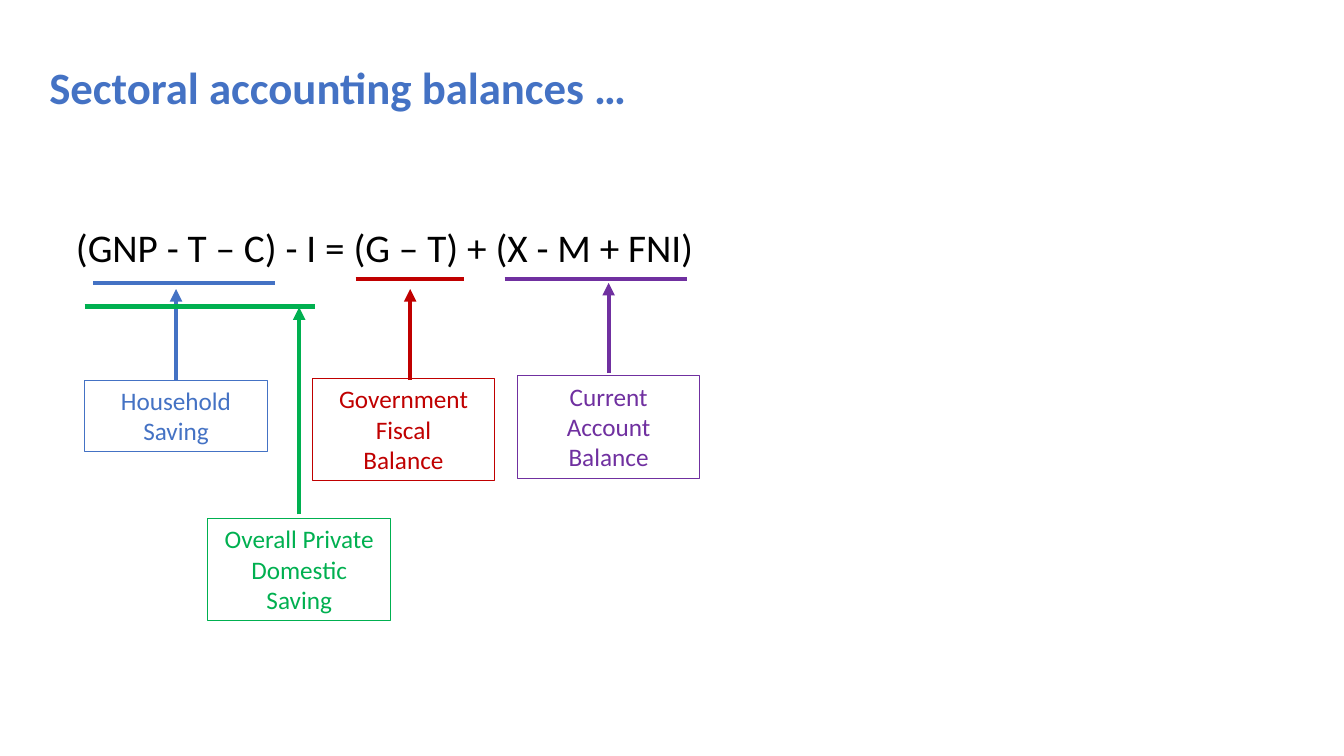
from dataclasses import dataclass

from pptx import Presentation
from pptx.dml.color import RGBColor
from pptx.enum.shapes import MSO_CONNECTOR, MSO_SHAPE
from pptx.enum.text import MSO_ANCHOR, MSO_AUTO_SIZE, PP_ALIGN
from pptx.oxml.ns import qn
from pptx.util import Pt


@dataclass(frozen=True)
class Theme:
    font: str = "Calibri"
    black: str = "000000"
    blue: str = "4472C4"
    green: str = "00B050"
    red: str = "C00000"
    purple: str = "7030A0"
    title_size: float = 32
    equation_size: float = 28
    label_size: float = 18
    border: float = 0.75
    stroke: float = 3


class BalanceSlide:
    def __init__(self, prs, theme):
        self.theme = theme
        self.slide = prs.slides.add_slide(prs.slide_layouts[1])

    def format_text(self, tf, size, color, align, bold=False):
        for p in tf.paragraphs:
            p.alignment = align
            for r in p.runs:
                r.font.name = self.theme.font
                r.font.size = Pt(size)
                r.font.bold = bold
                r.font.color.rgb = RGBColor.from_string(color)

    def place(self, sp, left, top, width, height):
        sp.left, sp.top = Pt(left), Pt(top)
        sp.width, sp.height = Pt(width), Pt(height)

    def title(self, text, *box):
        sp = self.slide.shapes.title
        self.place(sp, *box)
        tf = sp.text_frame
        tf.text = text
        tf.vertical_anchor = MSO_ANCHOR.MIDDLE
        tf.paragraphs[0].line_spacing = 0.9
        self.format_text(tf, self.theme.title_size, self.theme.blue, PP_ALIGN.LEFT, True)

    def equation(self, text, *box):
        sp = self.slide.placeholders[1]
        self.place(sp, *box)
        tf = sp.text_frame
        tf.text = text
        p = tf.paragraphs[0]
        p.line_spacing = 0.9
        p.space_before = Pt(0)
        pPr = p._p.get_or_add_pPr()
        pPr.set("marL", "0")
        pPr.set("indent", "0")
        pPr.append(pPr.makeelement(qn("a:buNone"), {}))
        self.format_text(tf, self.theme.equation_size, self.theme.black, PP_ALIGN.LEFT)

    def label(self, text, color, left, top, height, width=130.5):
        sp = self.slide.shapes.add_shape(
            MSO_SHAPE.RECTANGLE, Pt(left), Pt(top), Pt(width), Pt(height))
        sp.shadow.inherit = False
        sp.fill.background()
        sp.line.color.rgb = RGBColor.from_string(color)
        sp.line.width = Pt(self.theme.border)
        tf = sp.text_frame
        tf.text = text
        tf.word_wrap = True
        tf.auto_size = MSO_AUTO_SIZE.SHAPE_TO_FIT_TEXT
        tf.vertical_anchor = MSO_ANCHOR.TOP
        self.format_text(tf, self.theme.label_size, color, PP_ALIGN.CENTER)
        return sp

    def line(self, color, x1, y1, x2, y2):
        cxn = self.slide.shapes.add_connector(
            MSO_CONNECTOR.STRAIGHT, Pt(x1), Pt(y1), Pt(x2), Pt(y2))
        cxn.line.color.rgb = RGBColor.from_string(color)
        cxn.line.width = Pt(self.theme.stroke)
        spPr = cxn._element.spPr
        spPr.append(spPr.makeelement(qn("a:effectLst"), {}))
        return cxn

    def underline(self, color, x1, x2, y):
        return self.line(color, x1, y, x2, y)

    def arrow(self, color, x, bottom, top):
        cxn = self.line(color, x, bottom, x, top)
        ln = cxn.line._get_or_add_ln()
        ln.append(ln.makeelement(qn("a:tailEnd"), {"type": "triangle"}))
        return cxn


def main():
    prs = Presentation()
    prs.slide_width, prs.slide_height = Pt(960), Pt(540)
    theme = Theme()
    s = BalanceSlide(prs, theme)

    s.title("Sectoral accounting balances …", 28, 29, 916, 71)
    s.equation("(GNP - T – C) - I = (G – T) + (X - M + FNI)", 47, 160, 897, 40)

    household = s.label("Household Saving", theme.blue, 60.5, 271.5, 51)
    s.label("Overall Private Domestic Saving", theme.green, 148.5, 370.5, 73)
    s.label("Government Fiscal\nBalance", theme.red, 223, 270.5, 73)
    s.label("Current Account Balance", theme.purple, 369.5, 268.5, 73)

    s.arrow(theme.blue, 125.75, 271.5, 206.5).begin_connect(household, 0)
    s.arrow(theme.green, 213.75, 367.5, 219.5)
    s.arrow(theme.red, 293, 271.5, 206.5)
    s.arrow(theme.purple, 434.75, 266.5, 202)

    s.underline(theme.green, 60.5, 225, 219)
    s.underline(theme.blue, 66.5, 196.5, 202)
    s.underline(theme.red, 254, 331.5, 199.5)
    s.underline(theme.purple, 360.5, 491, 199.5)

    prs.save("out.pptx")


if __name__ == "__main__":
    main()
